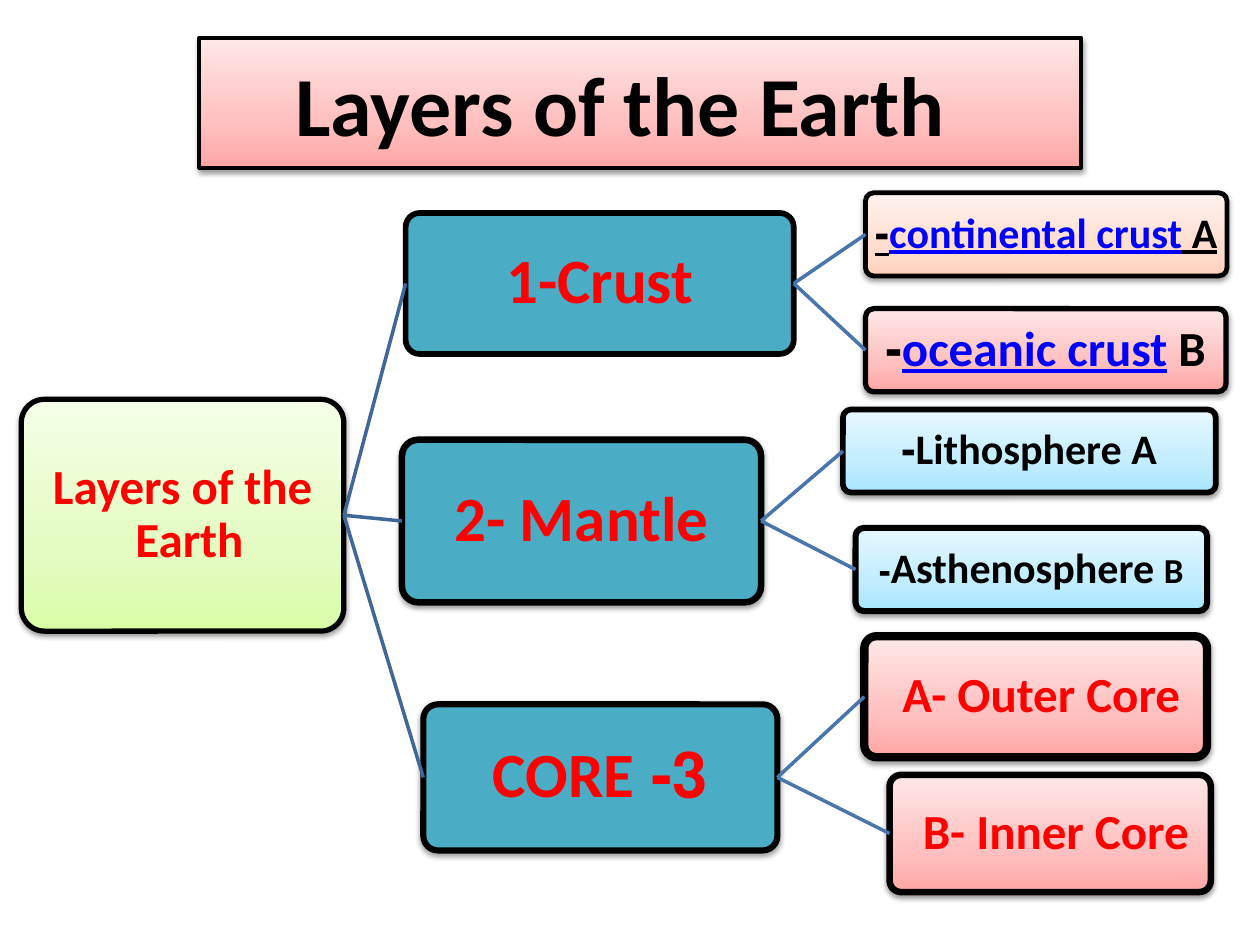
from copy import deepcopy
from dataclasses import dataclass

from lxml.etree import SubElement
from pptx import Presentation
from pptx.dml.color import RGBColor
from pptx.enum.shapes import MSO_CONNECTOR as Connector, MSO_SHAPE as Preset
from pptx.enum.text import MSO_ANCHOR as Anchor, MSO_AUTO_SIZE as AutoSize, PP_ALIGN as Align
from pptx.oxml.ns import qn
from pptx.util import Pt


@dataclass(frozen=True)
class Theme:
    """Colours, font and type sizes of the slide."""
    font: str = "Calibri"
    ink: str = "000000"
    accent: str = "FF0000"
    link: str = "0000FF"
    teal: str = "4BACC6"
    green: tuple = ("DAFDA7", "E4FCC2", "F5FFE7")
    peach: tuple = ("FFD2BD", "FFDED0", "FFF2ED")
    pink: tuple = ("FFA6A5", "FFC0BF", "FFE7E7")
    blue: tuple = ("A7E6FF", "C1EDFF", "E7F8FF")
    trunk: str = "3F6797"
    twig: str = "4875AC"
    stops: tuple = (0, 0.35, 1)
    title: int = 48
    layer: int = 36
    large: int = 28
    medium: int = 24
    small: int = 20


THEME = Theme()


def write_text(shape, runs, size, color=THEME.ink, rtl=False, spacing=0.9):
    """Write centred bold runs, each a (text, overrides) pair, into a shape."""
    frame = shape.text_frame
    frame.word_wrap = True
    frame.auto_size = AutoSize.NONE
    frame.vertical_anchor = Anchor.MIDDLE
    paragraph = frame.paragraphs[0]
    paragraph.alignment = Align.CENTER
    paragraph.line_spacing = spacing
    if rtl:
        paragraph._p.get_or_add_pPr().set("rtl", "1")
    for words, overrides in runs:
        run = paragraph.add_run()
        run.text = words
        run.font.name = THEME.font
        run.font.bold = True
        run.font.size = Pt(overrides.get("size", size))
        run.font.color.rgb = RGBColor.from_string(overrides.get("color", color))
        run.font.underline = overrides.get("underline", False)


class LayerSlide:
    """Holds the theme and the current slide and draws its elements."""

    def __init__(self, slide, theme):
        """Keep the slide and theme."""
        self.slide = slide
        self.theme = theme

    def decorate(self, shape, fill, weight, shadow=True):
        """Give a shape its flat or graded fill, outline and shadow."""
        if isinstance(fill, str):
            shape.fill.solid()
            shape.fill.fore_color.rgb = RGBColor.from_string(fill)
        else:
            shape.fill.gradient()
            shape.fill.gradient_angle = 90
            stop_list = next(shape._element.spPr.iter(qn("a:gsLst")))
            stop_list.append(deepcopy(stop_list[-1]))
            for stop, position, color in zip(shape.fill.gradient_stops, self.theme.stops, fill):
                stop.position = position
                stop.color.rgb = RGBColor.from_string(color)
        shape.line.color.rgb = RGBColor.from_string(self.theme.ink)
        shape.line.width = Pt(weight)
        shape.shadow.inherit = False
        if shadow:
            effects = shape._element.spPr.find(qn("a:effectLst"))
            outer = SubElement(effects, qn("a:outerShdw"), blurRad=str(Pt(3.1)),
                               dist=str(Pt(1.6)), dir="5400000", rotWithShape="0")
            tint = SubElement(outer, qn("a:srgbClr"), val=self.theme.ink)
            SubElement(tint, qn("a:alpha"), val="38000")

    def title(self, words, bounds):
        """Place and style the title placeholder."""
        heading = self.slide.shapes.title
        heading.left, heading.top, heading.width, heading.height = map(Pt, bounds)
        self.decorate(heading, self.theme.pink, 2.25)
        heading.text_frame.margin_right = Pt(30)
        write_text(heading, [(words, {})], self.theme.title, spacing=1.0)

    def box(self, bounds, runs, fill, weight, inset=1.5, shadow=True, **text_format):
        """Draw a rounded box with text."""
        node = self.slide.shapes.add_shape(Preset.ROUNDED_RECTANGLE, *map(Pt, bounds))
        node.adjustments[0] = 0.1
        self.decorate(node, fill, weight, shadow)
        frame = node.text_frame
        frame.margin_left = frame.margin_right = Pt(inset)
        frame.margin_top = frame.margin_bottom = Pt(inset)
        write_text(node, runs, **text_format)
        return node

    def branch(self, parent, child, color):
        """Join the right side of a parent to the left side of a child."""
        link = self.slide.shapes.add_connector(Connector.STRAIGHT, 0, 0, 0, 0)
        link.begin_connect(parent, 3)
        link.end_connect(child, 1)
        link.line.color.rgb = RGBColor.from_string(color)
        link.line.width = Pt(2)
        SubElement(link._element.spPr, qn("a:effectLst"))


def main():
    """Build the diagram of the Earth's layers."""
    deck = Presentation()
    deck.slide_width, deck.slide_height = Pt(720), Pt(540)
    page = LayerSlide(deck.slides.add_slide(deck.slide_layouts[5]), THEME)
    page.title("Layers of the Earth", (113.8, 21.6, 504, 74.2))

    linked = {"color": THEME.link, "underline": True}
    layer_style = dict(fill=THEME.teal, size=THEME.layer, color=THEME.accent, inset=2)
    crust_style = dict(weight=3, rtl=True)
    mantle_style = dict(fill=THEME.blue, size=THEME.medium, rtl=True)
    core_style = dict(fill=THEME.pink, size=THEME.large, color=THEME.accent)
    layers = [
        ((231.8, 121.7, 221.8, 80.6), "1-Crust", dict(weight=3.25, shadow=False), [
            ((494.6, 110.2, 206.6, 47.5),
             [("continental crust", linked), (" A-", {"underline": True})],
             crust_style | dict(fill=THEME.peach, size=THEME.medium, weight=2.75)),
            ((494.6, 176.4, 206, 47.5), [("oceanic crust", linked), (" B-", {})],
             crust_style | dict(fill=THEME.pink, size=THEME.large)),
        ]),
        ((229.7, 251.3, 205.2, 92.9), "2- Mantle", dict(weight=3.75), [
            ((481.7, 234, 213.1, 47.5), [("Lithosphere A-", {})],
             mantle_style | dict(weight=3.25)),
            ((488.9, 301.7, 200.9, 47.5),
             [("Asthenosphere ", {}), ("B-", {"size": THEME.small})],
             mantle_style | dict(weight=3.5)),
        ]),
        ((241.9, 402.5, 202.3, 83.5), "3- CORE", dict(weight=3.5, rtl=True), [
            ((493.9, 363.6, 195.8, 69.1), [(" A- Outer Core", {})],
             core_style | dict(weight=4.75)),
            ((508.3, 442.8, 183.6, 67), [(" B- Inner Core", {})],
             core_style | dict(weight=3.75)),
        ]),
    ]

    earth = page.box((12.2, 228.2, 184.3, 132.5), [("Layers of the Earth ", {})], THEME.green, 3,
                     size=THEME.large, color=THEME.accent, rtl=True)
    for bounds, name, style, parts in layers:
        layer = page.box(bounds, [(name, {})], **layer_style, **style)
        page.branch(earth, layer, THEME.trunk)
        for part_bounds, runs, part_style in parts:
            part = page.box(part_bounds, runs, **part_style)
            page.branch(layer, part, THEME.twig)

    deck.save("out.pptx")


if __name__ == "__main__":
    main()
